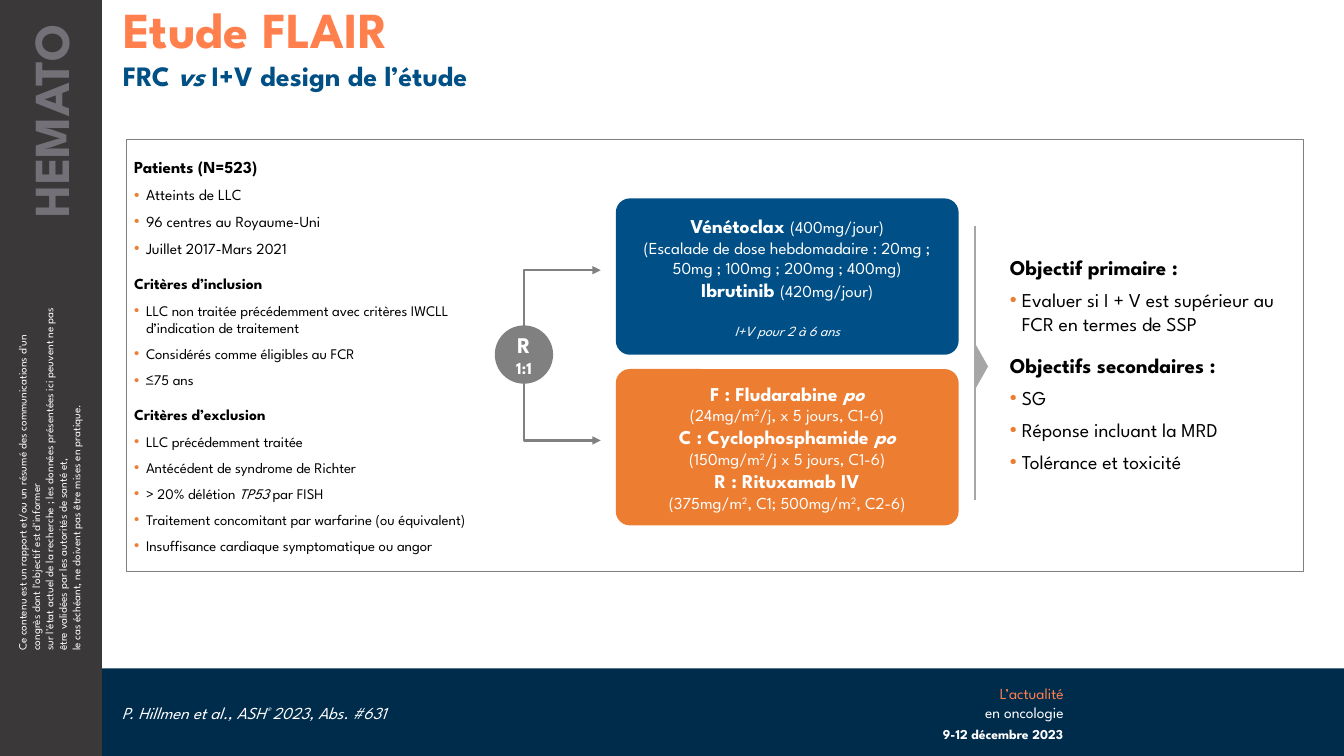
"""Build the FLAIR study design slide."""
from lxml.etree import SubElement
from pptx import Presentation
from pptx.dml.color import RGBColor
from pptx.enum.shapes import MSO_CONNECTOR, MSO_SHAPE
from pptx.enum.text import MSO_ANCHOR, MSO_AUTO_SIZE, PP_ALIGN
from pptx.oxml.ns import qn
from pptx.util import Cm, Pt

COLORS = {
    "navy": "002C4C", "charcoal": "3A3839", "mauve": "737078", "coral": "FF7F4D",
    "blue": "005086", "arm_blue": "005087", "orange": "ED7D31", "gray": "808080",
    "silver": "A6A6A6", "white": "FFFFFF", "black": "000000",
}
FONT = "League Spartan"
BOLD, ITALIC, SUPER = {"bold": True}, {"italic": True}, {"baseline": "30000"}


def write(holder, box, paragraphs, color="white", align=PP_ALIGN.LEFT,
          anchor=MSO_ANCHOR.TOP, insets=(0.25, 0.13, 0.25, 0.13), spacing=1.0):
    """Place a text holder and fill it with (runs, size, options) paragraphs."""
    holder.left, holder.top, holder.width, holder.height = map(Cm, box)
    frame = holder.text_frame
    frame.word_wrap, frame.auto_size = True, MSO_AUTO_SIZE.NONE
    frame.vertical_anchor = anchor
    frame.margin_left, frame.margin_top, frame.margin_right, frame.margin_bottom = map(Cm, insets)
    for index, (runs, size, options) in enumerate(paragraphs):
        paragraph = frame.add_paragraph() if index else frame.paragraphs[0]
        paragraph.alignment, paragraph.line_spacing = align, spacing
        paragraph.space_before = Pt(options.get("before", 0) if index else 0)
        properties = paragraph._p.get_or_add_pPr()
        if options.get("bulleted"):
            properties.set("marL", str(Cm(0.3)))
            properties.set("indent", str(-Cm(0.3)))
            bullet_color = SubElement(properties, qn("a:buClr"))
            SubElement(bullet_color, qn("a:srgbClr"), val=COLORS["orange"])
            SubElement(properties, qn("a:buChar"), char="•")
        else:
            properties.set("marL", "0")
            properties.set("indent", "0")
            SubElement(properties, qn("a:buNone"))
        paragraph.font.name, paragraph.font.size = FONT, Pt(size)
        paragraph.font.bold = options.get("bold", False)
        paragraph.font.italic = options.get("italic", False)
        paragraph.font.color.rgb = RGBColor.from_string(COLORS[options.get("color", color)])
        for text, changes in [(runs, {})] if isinstance(runs, str) else runs:
            run = paragraph.add_run()
            run.text = text
            for key, value in changes.items():
                if key == "baseline":
                    run._r.get_or_add_rPr().set(key, value)
                else:
                    setattr(run.font, key, value)


def draw(kind, box, fill=None, line=None, weight=0.75):
    """Add a preset shape with the given fill and outline."""
    shape = slide.shapes.add_shape(kind, *map(Cm, box))
    shape.shadow.inherit = False
    if fill:
        shape.fill.solid()
        shape.fill.fore_color.rgb = RGBColor.from_string(COLORS[fill])
    else:
        shape.fill.background()
    if line:
        shape.line.color.rgb = RGBColor.from_string(COLORS[line])
        shape.line.width = Pt(weight)
    else:
        shape.line.fill.background()
    return shape


deck = Presentation()
deck.slide_width, deck.slide_height = Cm(33.87), Cm(19.05)
slide = deck.slides.add_slide(deck.slide_layouts[3])
title, criteria, objectives = slide.placeholders

draw(MSO_SHAPE.RECTANGLE, (2.57, 16.84, 31.3, 2.21), "navy")
draw(MSO_SHAPE.RECTANGLE, (0, 0, 2.57, 19.05), "charcoal")
draw(MSO_SHAPE.RECTANGLE, (3.18, 3.51, 29.67, 10.9), line="gray")

heading_insets = (0.51, 0.13, 0.25, 0.13)
write(title, (2.59, 0, 31.27, 1.45), [("Etude FLAIR", 36, BOLD)], "coral",
      insets=heading_insets, spacing=0.9)
subtitle = slide.shapes.add_textbox(0, 0, 0, 0)
write(subtitle, (2.59, 1.45, 31.27, 0.94),
      [([("FRC", {}), (" vs ", ITALIC), ("I+V design de l’étude", {})], 20, BOLD)],
      "blue", insets=heading_insets, spacing=0.9)

disclaimer = slide.shapes.add_textbox(0, 0, 0, 0)
write(disclaimer, (-3.33, 11.1, 9.14, 1.96), [(sentence, 8, {}) for sentence in (
    "Ce contenu est un rapport et/ou un résumé des communications d'un congrès dont l'objectif est d'informer",
    "sur l'état actuel de la recherche ; les données présentées ici peuvent ne pas être validées par les autorités de santé et,",
    "le cas échéant, ne doivent pas être mises en pratique.",
)])
specialty = slide.shapes.add_textbox(0, 0, 0, 0)
write(specialty, (-2.64, 3, 7.8, 1.8), [("HEMATO", 36, BOLD)], "mauve", PP_ALIGN.RIGHT,
      insets=(0.25, 0.13, 0.61, 0.13))
disclaimer.rotation = specialty.rotation = 270

citation = slide.shapes.add_textbox(0, 0, 0, 0)
write(citation, (2.82, 17.63, 14.33, 0.69),
      [([("P. Hillmen et al., ASH", {}), ("® ", SUPER), ("2023, Abs. #631", {})], 12, ITALIC)],
      spacing=0.9)
series = slide.shapes.add_textbox(0, 0, 0, 0)
write(series, (22.89, 17.12, 4.17, 1.19),
      [("L’actualité", 11, {"color": "coral"}), ("en oncologie", 11, {})], align=PP_ALIGN.RIGHT)
dates = slide.shapes.add_textbox(0, 0, 0, 0)
write(dates, (22.89, 18.21, 3.91, 0.69), [("9-12 décembre 2023", 9.7, BOLD)],
      align=PP_ALIGN.RIGHT, insets=(0.25, 0.13, 0, 0.13), spacing=0.9)

criteria_groups = [
    ("Patients (N=523)", 12, 11,
     ["Atteints de LLC", "96 centres au Royaume-Uni", "Juillet 2017-Mars 2021"]),
    ("Critères d’inclusion", 11, 10.5,
     ["LLC non traitée précédemment avec critères IWCLL d’indication de traitement",
      "Considérés comme éligibles au FCR", "≤75 ans"]),
    ("Critères d’exclusion", 11, 10.5,
     ["LLC précédemment traitée", "Antécédent de syndrome de Richter",
      [("> 20% délétion", {}), (" TP53 ", ITALIC), ("par FISH", {})],
      "Traitement concomitant par warfarine (ou équivalent)",
      "Insuffisance cardiaque symptomatique ou angor"]),
]
objective_groups = [
    ("Objectif primaire :", 15, 14, ["Evaluer si I + V est supérieur au FCR en termes de SSP"]),
    ("Objectifs secondaires :", 15, 14,
     ["SG", "Réponse incluant la MRD", "Tolérance et toxicité"]),
]
for listing, box, groups in (
    (criteria, (3.18, 3.51, 9.7, 10.9), criteria_groups),
    (objectives, (25.25, 5.51, 7.42, 7.32), objective_groups),
):
    lines = []
    for heading, heading_size, item_size, items in groups:
        lines.append((heading, heading_size, {"bold": True, "before": 12}))
        lines += [(item, item_size, {"bulleted": True, "before": 6}) for item in items]
    write(listing, box, lines, "black", anchor=MSO_ANCHOR.MIDDLE, insets=(0.2,) * 4)

branches = draw(MSO_SHAPE.LEFT_BRACKET, (13.21, 6.81, 1.93, 4.29), line="gray", weight=1.5)
branches.adjustments[0] = 0
for end in ("a:headEnd", "a:tailEnd"):
    SubElement(branches.line._get_or_add_ln(), qn(end), type="triangle")
circle_box = (12.47, 8.2, 1.47, 1.47)
write(draw(MSO_SHAPE.OVAL, circle_box, "gray"), circle_box,
      [("R", 16, BOLD), ("1:1", 12, BOLD)], align=PP_ALIGN.CENTER,
      anchor=MSO_ANCHOR.MIDDLE, insets=(0,) * 4)

dose = {"bold": False, "size": Pt(12)}
venetoclax_arm = [
    ([("Vénétoclax ", {}), ("(400mg/jour)", dose)], 14, BOLD),
    ("(Escalade de dose hebdomadaire : 20mg ; 50mg ; 100mg ; 200mg ; 400mg)", 12, {}),
    ([("Ibrutinib ", {}), ("(420mg/jour)", dose)], 14, BOLD),
    ("I+V pour 2 à 6 ans", 10, {"italic": True, "before": 15}),
]
fcr_arm = [
    ([("F : Fludarabine ", {}), ("po", ITALIC)], 14, BOLD),
    ([("(24mg/m", {}), ("2", SUPER), ("/j, x 5 jours, C1-6)", {})], 12, {}),
    ([("C : Cyclophosphamide ", {}), ("po", ITALIC)], 14, BOLD),
    ([("(150mg/m", {}), ("2", SUPER), ("/j x 5 jours, C1-6)", {})], 12, {}),
    ("R : Rituxamab IV", 14, BOLD),
    ([("(375mg/m", {}), ("2", SUPER), (", C1; 500mg/m", {}), ("2", SUPER), (", C2-6)", {})], 12, {}),
]
for top, fill, regimen in ((5, "arm_blue", venetoclax_arm), (9.3, "orange", fcr_arm)):
    arm_box = (15.52, top, 8.64, 3.94)
    arm = draw(MSO_SHAPE.ROUNDED_RECTANGLE, arm_box, fill)
    arm.adjustments[0] = 0.09
    write(arm, arm_box, regimen, align=PP_ALIGN.CENTER, anchor=MSO_ANCHOR.MIDDLE,
          insets=(0.1,) * 4)

divider = slide.shapes.add_connector(MSO_CONNECTOR.STRAIGHT, Cm(24.56), Cm(5.69), Cm(24.56), Cm(12.6))
divider.line.color.rgb = RGBColor.from_string(COLORS["silver"])
divider.line.width = Pt(1.5)
SubElement(divider._element.spPr, qn("a:effectLst"))
pointer = draw(MSO_SHAPE.ISOSCELES_TRIANGLE, (24.15, 9.07, 1.17, 0.33), "silver")
pointer.rotation = 90

deck.save("out.pptx")
